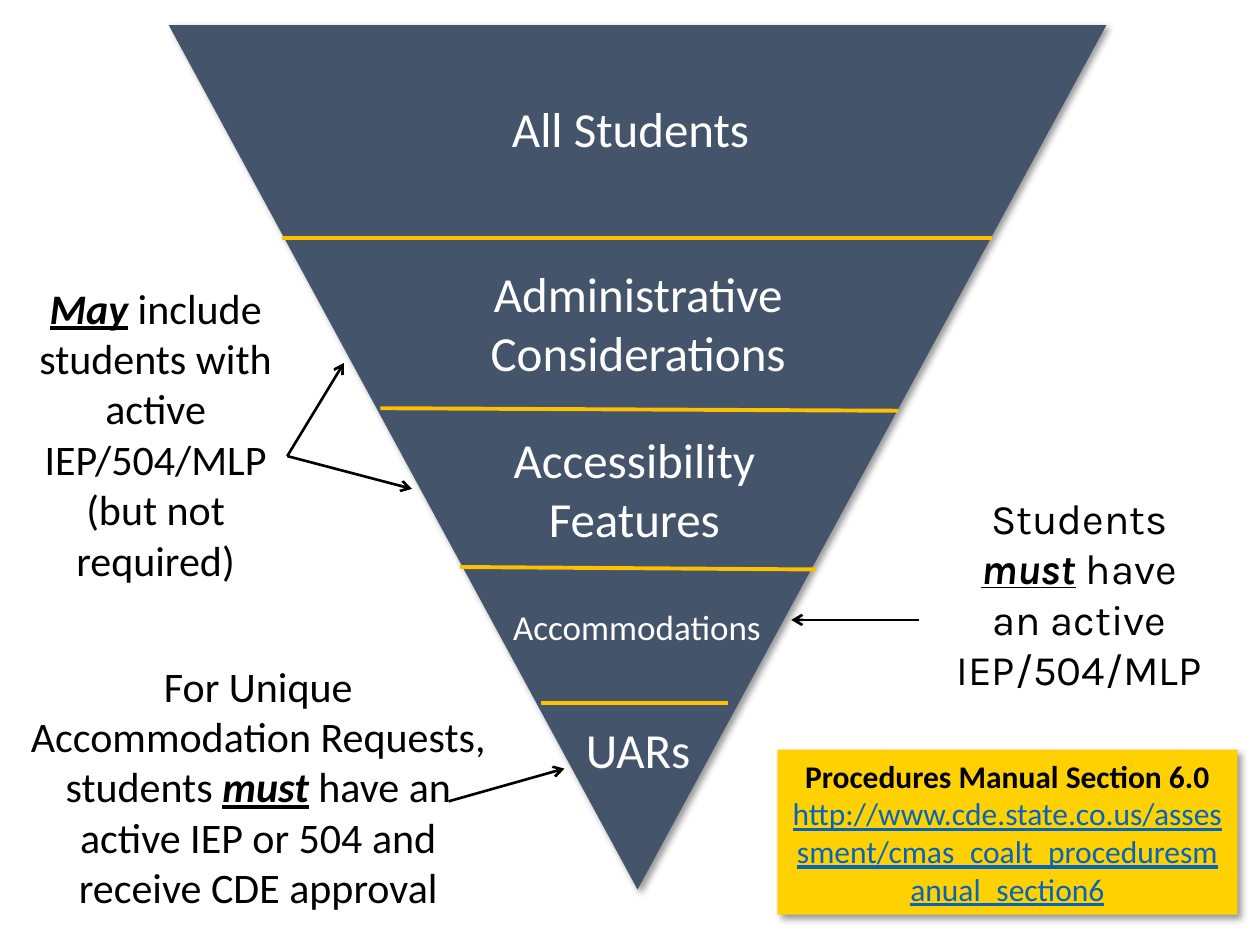
from lxml import etree
from pptx import Presentation
from pptx.dml.color import RGBColor
from pptx.enum.shapes import MSO_CONNECTOR, MSO_SHAPE
from pptx.enum.text import MSO_ANCHOR, PP_ALIGN
from pptx.oxml import parse_xml
from pptx.oxml.ns import qn
from pptx.util import Inches, Pt

STRAIGHT = MSO_CONNECTOR.STRAIGHT
TRIANGLE, RECTANGLE = MSO_SHAPE.ISOSCELES_TRIANGLE, MSO_SHAPE.RECTANGLE
MIDDLE, CENTER = MSO_ANCHOR.MIDDLE, PP_ALIGN.CENTER

SLATE = RGBColor(0x44, 0x54, 0x6A)
GOLD = RGBColor(0xFF, 0xC0, 0x00)
YELLOW = RGBColor(0xFF, 0xD1, 0x00)
LINK_BLUE = RGBColor(0x05, 0x63, 0xC1)
WHITE = RGBColor(0xFF, 0xFF, 0xFF)
BLACK = RGBColor(0x00, 0x00, 0x00)

SHADOW = (
    '<a:effectLst xmlns:a="http://schemas.openxmlformats.org/drawingml/2006/main">'
    '<a:outerShdw blurRad="50800" dist="38100" dir="2700000" algn="tl" rotWithShape="0">'
    '<a:srgbClr val="000000"><a:alpha val="40000"/></a:srgbClr>'
    '</a:outerShdw></a:effectLst>'
)

deck = Presentation()
deck.slide_width, deck.slide_height = Inches(10), Inches(7.5)
slide = deck.slides.add_slide(deck.slide_layouts[6])
shapes = slide.shapes


def add_line(start, end, color, width):
    points = [Inches(value) for value in (*start, *end)]
    line = shapes.add_connector(STRAIGHT, *points)
    line.line.color.rgb = color
    line.line.width = Pt(width)
    etree.SubElement(line._element.spPr, qn("a:effectLst"))
    return line


def write_text(box, parts, size, color, font="Calibri"):
    """Fill a box with one centred paragraph; return its runs."""
    box.text_frame.word_wrap = True
    para = box.text_frame.paragraphs[0]
    para.alignment = CENTER
    para.font.size = Pt(size)
    para.font.name = font
    para.font.color.rgb = color
    spans = []
    for part in parts:
        span = para.add_run()
        span.text = part
        spans.append(span)
    return spans


# Inverted triangle and yellow reference box
panels = []
for kind, place, color in [
    (TRIANGLE, (1.34, 0.2, 7.44, 6.86), SLATE),
    (RECTANGLE, (6.17, 5.95, 3.65, 1.31), YELLOW),
]:
    panel = shapes.add_shape(kind, *map(Inches, place))
    panel.fill.solid()
    panel.fill.fore_color.rgb = color
    panel.line.fill.background()
    panel._element.spPr.append(parse_xml(SHADOW))
    panels.append(panel)
triangle, reference = panels
triangle.rotation = 180

# Dividers between the tiers
for start, end in [
    ((7.87, 1.89), (2.24, 1.89)),
    ((7.13, 3.26), (3.02, 3.24)),
    ((6.48, 4.52), (3.65, 4.5)),
    ((5.78, 5.58), (4.29, 5.58)),
]:
    add_line(start, end, GOLD, 2.25)

# Tier labels
for label, place, size in [
    ("All Students", (3.92, 0.73, 2.17, 0.57), 28),
    ("Administrative Considerations", (3.65, 2.04, 2.83, 1.04), 28),
    ("Accessibility Features", (3.81, 3.36, 2.45, 1.04), 28),
    ("Accommodations", (3.9, 4.76, 2.31, 0.44), 20),
    ("UARs", (3.98, 5.66, 2.17, 0.57), 28),
]:
    write_text(shapes.add_textbox(*map(Inches, place)), [label], size, WHITE)

# Side notes, each with one emphasised word
for before, stressed, after, place, font in [
    ("", "May", " include students with active IEP/504/MLP (but not required)",
     (0.13, 2.19, 2.21, 2.52), "Calibri"),
    ("Students ", "must", " have an active IEP/504/MLP",
     (7.46, 3.86, 2.21, 1.72), "Karla"),
    ("For Unique Accommodation Requests, students ", "must",
     " have an active IEP or 504 and receive CDE approval",
     (0.13, 5.19, 3.84, 2.12), "Calibri"),
]:
    note = shapes.add_textbox(*map(Inches, place))
    parts = [part for part in (before, stressed, after) if part]
    emphasis = write_text(note, parts, 24, BLACK, font)[-2].font
    emphasis.bold = emphasis.italic = emphasis.underline = True

# Arrows from the notes to the tiers
for start, end in [
    ((2.28, 3.62), (2.73, 2.88)),
    ((2.28, 3.62), (3.27, 3.88)),
    ((7.29, 4.92), (6.28, 4.92)),
    ((3.56, 6.36), (4.48, 6.1)),
]:
    arrow = add_line(start, end, BLACK, 1.5)
    etree.SubElement(arrow.line._get_or_add_ln(), qn("a:tailEnd"), type="arrow")

# Manual reference
reference.text_frame.vertical_anchor = MIDDLE
heading, address = write_text(
    reference,
    ["Procedures Manual Section 6.0 ",
     "http://www.cde.state.co.us/assessment/cmas_coalt_proceduresmanual_section6"],
    18, BLACK)
heading.font.bold = True
address.font.underline = True
address.font.color.rgb = LINK_BLUE

deck.save("out.pptx")
